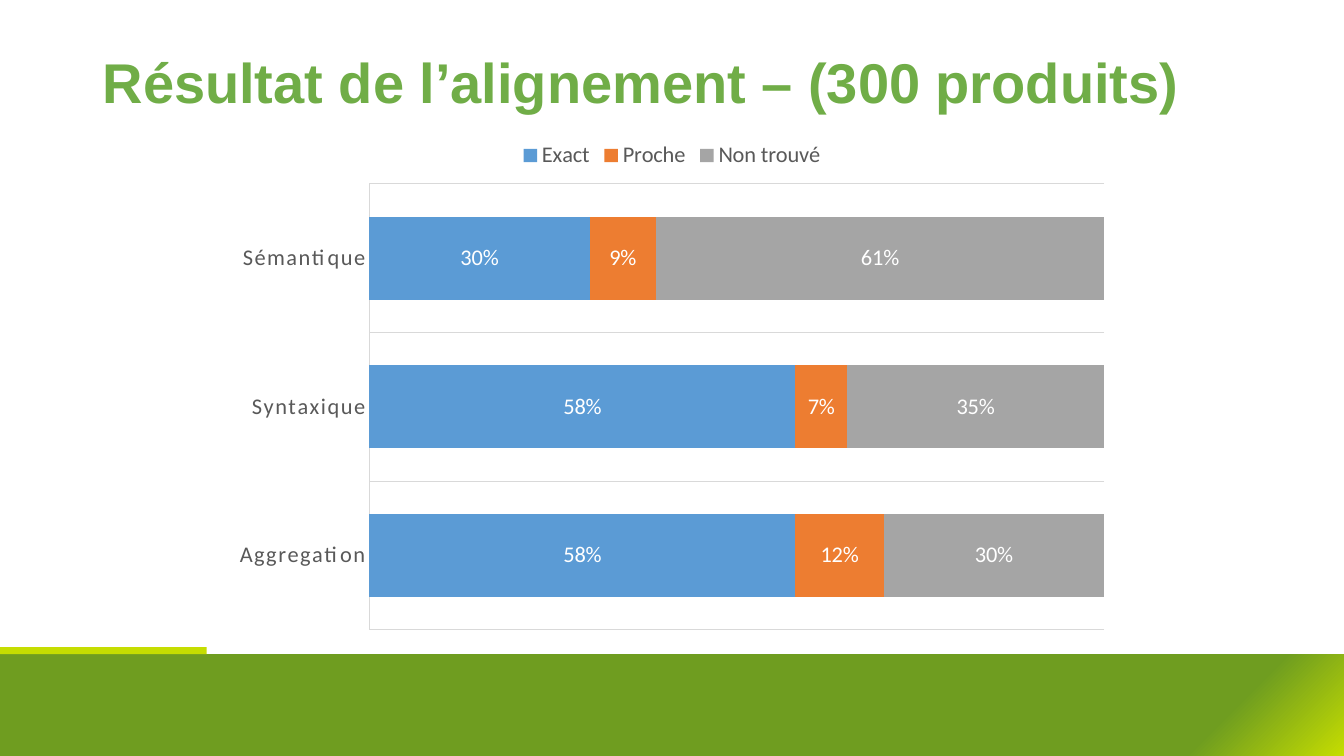
from dataclasses import dataclass

from pptx import Presentation
from pptx.chart.data import CategoryChartData
from pptx.dml.color import RGBColor
from pptx.enum import chart as charts, shapes, text
from pptx.oxml import parse_xml
from pptx.oxml.ns import nsdecls, qn
from pptx.util import Inches, Pt


@dataclass(frozen=True)
class Theme:
    title_color: str = "70AD47"
    band: str = "6F9D20"
    accent: str = "C5DD01"
    axis_text: str = "595959"
    axis_line: str = "D9D9D9"
    label: str = "FFFFFF"
    title_font: str = "Arial"
    chart_font: str = "Calibri"
    title_size: int = 40
    chart_size: int = 16
    line_width: float = 0.75


THEME = Theme()
CATEGORIES = ["Aggregation", "Syntaxique", "Sémantique"]
SERIES = [
    ("Exact", "5B9BD5", [0.58, 0.58, 0.30]),
    ("Proche", "ED7D31", [0.12, 0.07, 0.09]),
    ("Non trouvé", "A5A5A5", [0.30, 0.35, 0.61]),
]


def rgb(color):
    return RGBColor.from_string(color)


def box(left, top, width, height):
    return [Inches(length) for length in (left, top, width, height)]


def set_font(font, name, size, color, bold=False):
    font.name = name
    font.size = Pt(size)
    font.bold = bold
    font.color.rgb = rgb(color)


def set_line(line):
    line.color.rgb = rgb(THEME.axis_line)
    line.width = Pt(THEME.line_width)


def add_text(slide, content, place, *, font, size, color, bold=False, line_spacing=1.0):
    frame = slide.shapes.add_textbox(*place).text_frame
    frame.word_wrap = True
    frame.vertical_anchor = text.MSO_ANCHOR.MIDDLE
    paragraph = frame.paragraphs[0]
    paragraph.line_spacing = line_spacing
    run = paragraph.add_run()
    run.text = content
    set_font(run.font, font, size, color, bold)


def add_rectangle(slide, place, color):
    shape = slide.shapes.add_shape(shapes.MSO_SHAPE.RECTANGLE, *place)
    shape.shadow.inherit = False
    shape.fill.solid()
    shape.fill.fore_color.rgb = rgb(color)
    shape.line.fill.background()
    return shape


def add_corner_glow(shape, glow, base):
    """Replace the solid fill by a gradient radiating from the bottom right corner."""
    stops = "".join(
        f'<a:gs pos="{position * 1000}"><a:srgbClr val="{color}"/></a:gs>'
        for position, color in ((0, glow), (11, base), (100, base))
    )
    gradient = parse_xml(
        f'<a:gradFill {nsdecls("a")} rotWithShape="1"><a:gsLst>{stops}</a:gsLst>'
        '<a:path path="circle"><a:fillToRect l="100000" t="100000"/></a:path>'
        "</a:gradFill>"
    )
    properties = shape.element.spPr
    properties.replace(properties.find(qn("a:solidFill")), gradient)


def format_category_axis(axis):
    axis.major_tick_mark = charts.XL_TICK_MARK.NONE
    axis.minor_tick_mark = charts.XL_TICK_MARK.NONE
    axis.has_major_gridlines = True
    set_line(axis.major_gridlines.format.line)
    set_line(axis.format.line)
    set_font(axis.tick_labels.font, THEME.chart_font, THEME.chart_size, THEME.axis_text)
    for properties in axis._element.iter(qn("a:defRPr")):
        properties.set("spc", "120")


def format_series(series, color):
    series.format.fill.solid()
    series.format.fill.fore_color.rgb = rgb(color)
    labels = series.data_labels
    labels.show_value = True
    labels.position = charts.XL_LABEL_POSITION.CENTER
    labels.number_format = "0%"
    labels.number_format_is_linked = False
    set_font(labels.font, THEME.chart_font, THEME.chart_size, THEME.label)


def add_alignment_chart(slide, place):
    data = CategoryChartData(number_format="0%")
    data.categories = CATEGORIES
    for name, _, values in SERIES:
        data.add_series(name, values)
    chart = slide.shapes.add_chart(
        charts.XL_CHART_TYPE.BAR_STACKED_100, *place, data
    ).chart
    set_font(chart.font, THEME.chart_font, THEME.chart_size, THEME.axis_text)
    chart.has_title = False
    chart.has_legend = True
    chart.legend.position = charts.XL_LEGEND_POSITION.TOP
    chart.legend.include_in_layout = False
    set_font(chart.legend.font, THEME.chart_font, THEME.chart_size, THEME.axis_text)
    format_category_axis(chart.category_axis)
    chart.value_axis.has_major_gridlines = False
    chart.value_axis.visible = False
    plot = chart.plots[0]
    plot.gap_width = 79
    plot.overlap = 100
    plot.vary_by_categories = False
    for series, (_, color, _) in zip(plot.series, SERIES):
        format_series(series, color)


def main():
    presentation = Presentation()
    presentation.slide_width = Inches(13.33)
    presentation.slide_height = Inches(7.5)
    slide = presentation.slides.add_slide(presentation.slide_layouts[6])

    band = add_rectangle(slide, box(0, 6.49, 13.33, 1.01), THEME.band)
    add_corner_glow(band, THEME.accent, THEME.band)
    add_rectangle(slide, box(0, 6.42, 2.05, 0.07), THEME.accent)
    add_text(
        slide, "Résultat de l’alignement – (300 produits)", box(0.92, 0.4, 11.5, 0.89),
        font=THEME.title_font, size=THEME.title_size, color=THEME.title_color,
        bold=True, line_spacing=0.9,
    )
    add_alignment_chart(slide, box(2.2, 1.29, 8.93, 5.06))
    presentation.save("out.pptx")


if __name__ == "__main__":
    main()
